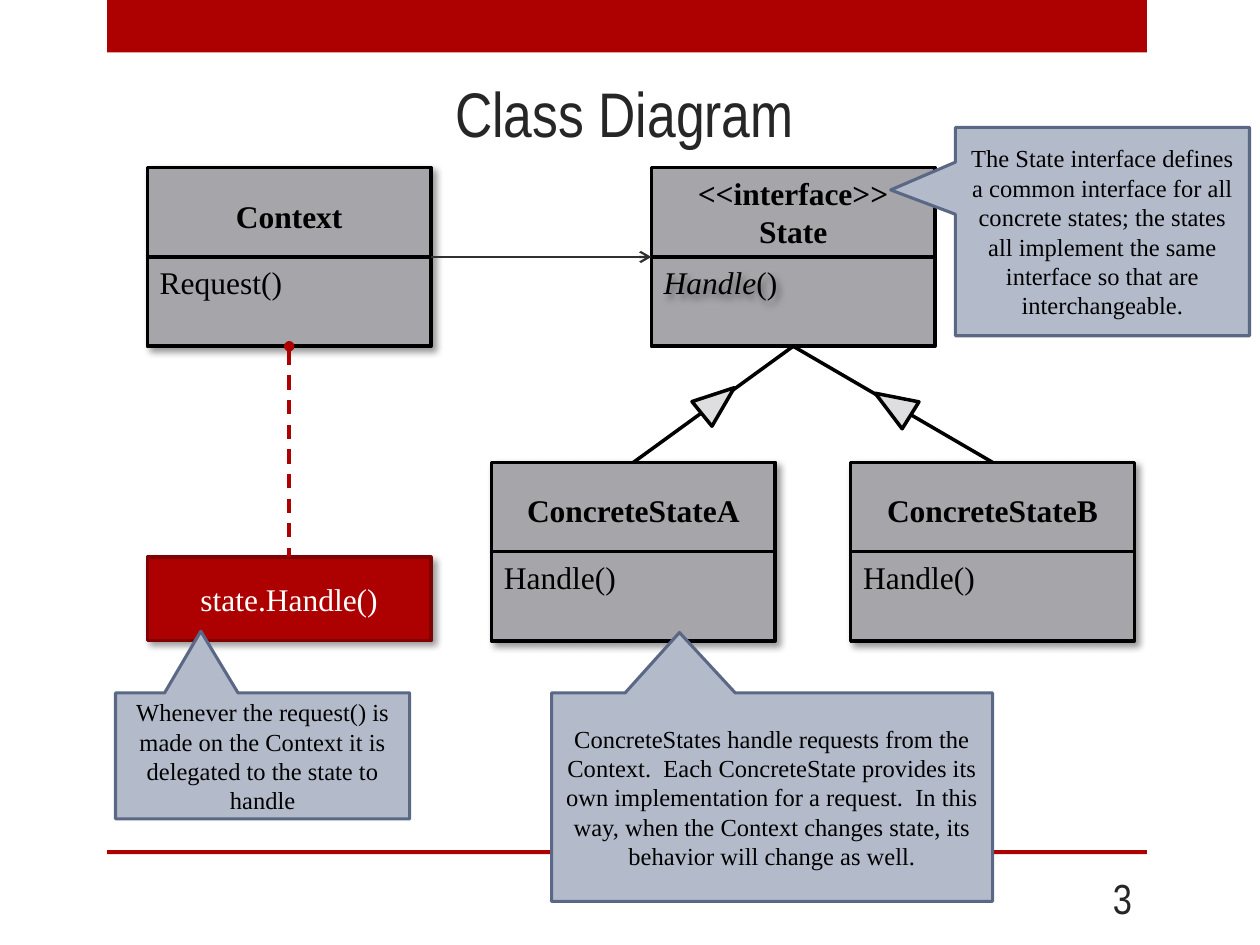
from dataclasses import dataclass
from lxml.etree import SubElement
from pptx import Presentation
from pptx.dml.color import RGBColor as RGB
from pptx.enum.dml import MSO_LINE as Dash
from pptx.enum.shapes import MSO_CONNECTOR as Link, MSO_SHAPE as Form
from pptx.enum.text import MSO_ANCHOR as Anchor, PP_ALIGN as Align
from pptx.oxml.ns import qn
from pptx.util import Cm, Pt


@dataclass(frozen=True)
class Theme:
    red: str = "AD0101"
    edge: str = "800101"
    ink: str = "262626"
    black: str = "000000"
    white: str = "FFFFFF"
    gray: str = "A5A5AA"
    tip: str = "DEDEE0"
    arrow: str = "303030"
    note: str = "B3BBCB"
    rim: str = "5A6885"
    head: str = "Arial Narrow"
    body: str = "Times New Roman"
    title: int = 36
    page: int = 24
    label: int = 18
    small: int = 14
    thick: float = 2
    thin: float = 1.75
    fine: float = 1.25


T = Theme()
WIDE, HIGH = 5.72, 3.6  # size of a class box, cm


def style(para, size, color, face=T.body, align=Align.CENTER, bold=False):
    para.alignment = align
    font = para.font
    font.name, font.size, font.bold = face, Pt(size), bold
    font.color.rgb = RGB.from_string(color)


def write(frame, text, size, color, anchor=Anchor.MIDDLE, **look):
    frame.word_wrap = True
    frame.vertical_anchor = anchor
    frame.text = text
    for para in frame.paragraphs:
        style(para, size, color, **look)


def label(slide, box, text, size=T.label, color=T.black, **look):
    shape = slide.shapes.add_textbox(*map(Cm, box))
    write(shape.text_frame, text, size, color, **look)
    return shape


def block(slide, form, box, fill, line=None, width=T.thick):
    shape = slide.shapes.add_shape(form, *map(Cm, box))
    shape.shadow.inherit = False
    shape.fill.solid()
    shape.fill.fore_color.rgb = RGB.from_string(fill)
    if line:
        shape.line.color.rgb = RGB.from_string(line)
        shape.line.width = Pt(width)
    else:
        shape.line.fill.background()
    return shape


def cast(shape):
    """Give a shape a soft shadow to the lower right."""
    shape.shadow.inherit = False
    fx = shape._element.spPr.find(qn("a:effectLst"))
    outer = SubElement(fx, qn("a:outerShdw"), blurRad=str(Pt(4)),
                       dist=str(Pt(3)), dir=str(45 * 60000),
                       algn="tl", rotWithShape="0")
    tone = SubElement(outer, qn("a:srgbClr"), val=T.black)
    SubElement(tone, qn("a:alpha"), val="40000")


def join(slide, start, stop, color=T.black, width=T.thick, dash=None,
         end=None, kind=None):
    line = slide.shapes.add_connector(Link.STRAIGHT, *map(Cm, start + stop))
    line.line.color.rgb = RGB.from_string(color)
    line.line.width = Pt(width)
    if dash:
        line.line.dash_style = dash
    if end:
        SubElement(line.line._get_or_add_ln(), qn(f"a:{end}"), type=kind)
    SubElement(line._element.spPr, qn("a:effectLst"))


# Bars, title and page number
def frame(slide, title, page):
    block(slide, Form.RECTANGLE, (2.16, 0, 20.96, 1.06), T.red)
    block(slide, Form.RECTANGLE, (2.16, 17.14, 20.96, 0.08), T.red)
    head = slide.shapes.title
    head.left, head.top, head.width, head.height = map(
        Cm, (2.11, 1.35, 20.96, 1.83))
    write(head.text_frame, title, T.title, T.ink, face=T.head)
    label(slide, (20.96, 17.58, 2.11, 1.02), page, T.page, T.ink,
          face=T.head, align=Align.RIGHT)


# Class box: name above the rule, method below it
def card(slide, left, top, name, method, abstract=False):
    mid = top + HIGH / 2
    base = block(slide, Form.RECTANGLE, (left, top, WIDE, HIGH),
                 T.gray, T.black)
    join(slide, (left, mid), (left + WIDE, mid))
    drop = 0 if abstract else 0.46
    label(slide, (left, top + drop, WIDE, 1.02), name, bold=True,
          anchor=Anchor.TOP)
    text = label(slide, (left, mid, WIDE, 1.02), method, align=Align.LEFT,
                 anchor=Anchor.TOP)
    if abstract:
        para = text.text_frame.paragraphs[0]
        para.runs[0].text = method.removesuffix("()")
        para.runs[0].font.italic = True
        para.add_run().text = "()"
        cast(text)
    else:
        cast(base)


# Inheritance line with a triangle part of the way down
def inherit(slide, start, stop, part, turn):
    join(slide, start, stop)
    x, y = (a + (b - a) * part for a, b in zip(start, stop))
    wide, high = 0.64, 0.84
    tip = block(slide, Form.ISOSCELES_TRIANGLE,
                (x - wide / 2, y - high / 2, wide, high), T.tip, T.black)
    tip.rotation = turn


# Delegated call, tied to its class by a dashed line
def call(slide, left, top, text, source):
    shape = block(slide, Form.RECTANGLE, (left, top, WIDE, 1.69),
                  T.red, T.edge, T.thin)
    cast(shape)
    write(shape.text_frame, text, T.label, T.white)
    x = left + WIDE / 2
    join(slide, (x, source), (x, top), T.red, dash=Dash.DASH,
         end="headEnd", kind="oval")


def note(slide, box, point, text):
    shape = block(slide, Form.RECTANGULAR_CALLOUT, box, T.note, T.rim, T.thin)
    shape.adjustments[0], shape.adjustments[1] = point
    write(shape.text_frame, text, T.small, T.black)


def diagram(slide, left, top):
    low = top + 5.94
    state, first, second = left + 10.16, left + 6.94, left + 14.18
    half, foot = WIDE / 2, top + HIGH

    card(slide, first, low, "ConcreteStateA", "Handle()")
    card(slide, state, top, "<<interface>>\nState", "Handle()", True)
    card(slide, second, low, "ConcreteStateB", "Handle()")
    card(slide, left, top, "Context", "Request()")
    call(slide, left, top + 7.85, "state.Handle()", foot)

    root = (state + half, foot)
    inherit(slide, root, (first + half, low), 0.47, 51)
    inherit(slide, root, (second + half, low), 0.5, 302)
    mid = top + HIGH / 2
    join(slide, (left + WIDE, mid), (state, mid), T.arrow, T.fine,
         end="tailEnd", kind="arrow")


def notes(slide):
    note(slide, (2.33, 13.97, 5.93, 2.54), (-0.21, -0.99),
         "Whenever the request() is made on the Context it is delegated "
         "to the state to handle")
    note(slide, (19.26, 2.57, 5.93, 4.2), (-0.72, -0.2),
         "The State interface defines a common interface for all concrete "
         "states; the states all implement the same interface so that are "
         "interchangeable.")
    note(slide, (11.12, 13.97, 8.89, 4.2), (-0.21, -0.79),
         "ConcreteStates handle requests from the Context.  Each "
         "ConcreteState provides its own implementation for a request.  In "
         "this way, when the Context changes state, its behavior will "
         "change as well.")


def main():
    deck = Presentation()
    deck.slide_width, deck.slide_height = Cm(25.4), Cm(19.05)
    slide = deck.slides.add_slide(deck.slide_layouts[5])
    frame(slide, "Class Diagram", "3")
    diagram(slide, 2.97, 3.38)
    notes(slide)
    deck.save("out.pptx")


if __name__ == "__main__":
    main()
